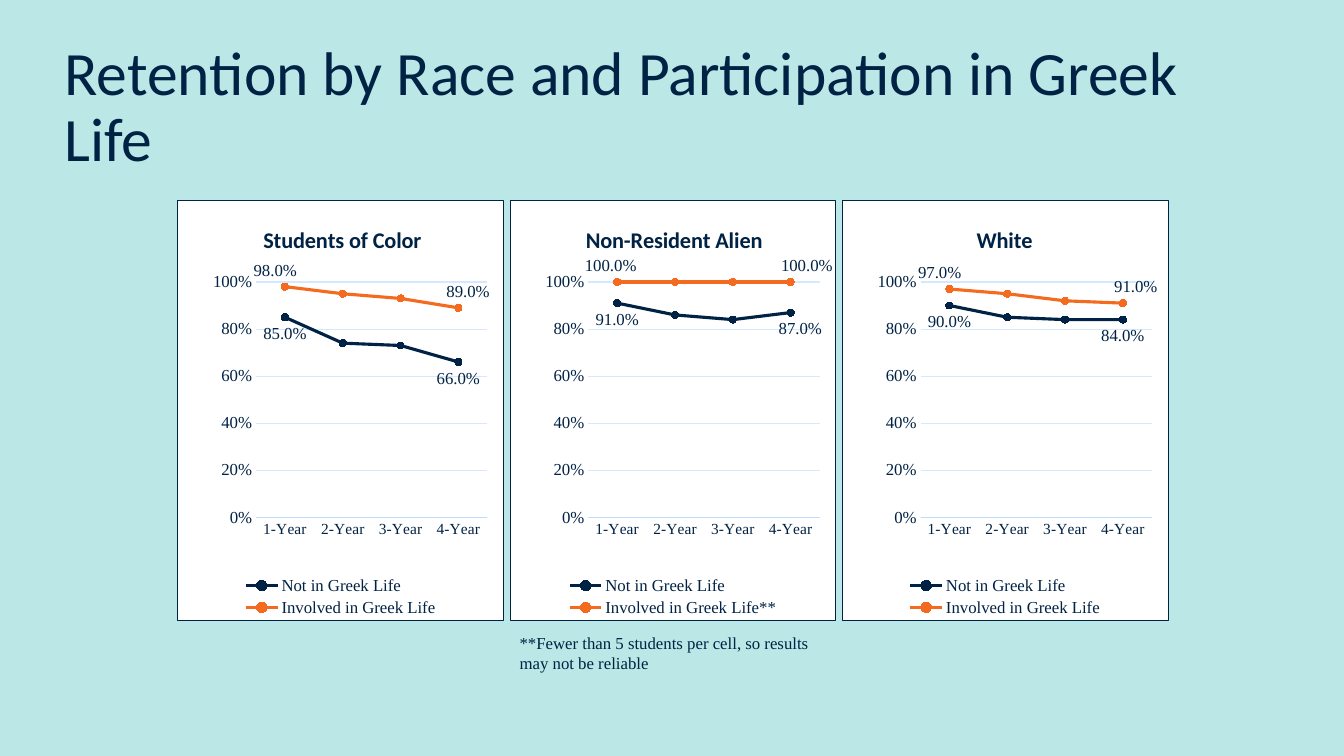
"""Build a slide of three line charts on retention and Greek Life."""
from dataclasses import dataclass

from lxml import etree
from pptx import Presentation
from pptx.chart.data import CategoryChartData
from pptx.dml.color import RGBColor
from pptx.enum.chart import (XL_CHART_TYPE, XL_LABEL_POSITION, XL_LEGEND_POSITION,
                             XL_MARKER_STYLE, XL_TICK_MARK)
from pptx.enum.text import MSO_ANCHOR, MSO_AUTO_SIZE, PP_ALIGN
from pptx.oxml import parse_xml
from pptx.oxml.ns import nsdecls, qn
from pptx.util import Inches, Pt

NAVY = RGBColor(0x00, 0x22, 0x44)
ORANGE = RGBColor(0xF4, 0x6A, 0x1F)
AQUA = RGBColor(0xBB, 0xE7, 0xE6)
AXIS_BLUE = RGBColor(0xBD, 0xDE, 0xFF)
GRID_BLUE = RGBColor(0xD3, 0xE9, 0xFF)
WHITE = RGBColor(0xFF, 0xFF, 0xFF)
SERIF = "Times New Roman"
SANS = "Calibri"
YEARS = ["1-Year", "2-Year", "3-Year", "4-Year"]
LEFT, TOP, WIDTH, HEIGHT, PITCH = 1.76, 1.98, 3.24, 4.18, 3.295


@dataclass
class Line:
    name: str
    values: list[float]
    color: RGBColor
    position: XL_LABEL_POSITION
    shifts: tuple[float, float]


@dataclass
class Panel:
    title: str
    title_x: float
    lines: list[Line]


def not_greek(values: list[float], last_shift: float = 0) -> Line:
    return Line("Not in Greek Life", values, NAVY,
                XL_LABEL_POSITION.BELOW, (0, last_shift))


def greek(values: list[float], shifts: tuple[float, float], mark: str = "") -> Line:
    return Line("Involved in Greek Life" + mark, values, ORANGE,
                XL_LABEL_POSITION.ABOVE, shifts)


PANELS = [
    Panel("Students of Color", 0.25, [
        not_greek([0.85, 0.74, 0.73, 0.66]),
        greek([0.98, 0.95, 0.93, 0.89], (-0.03, 0.03))]),
    Panel("Non-Resident Alien", 0.22, [
        not_greek([0.91, 0.86, 0.84, 0.87], 0.03),
        greek([1, 1, 1, 1], (-0.02, 0.05), "**")]),
    Panel("White", 0.4, [
        not_greek([0.9, 0.85, 0.84, 0.84]),
        greek([0.97, 0.95, 0.92, 0.91], (-0.03, 0.04))]),
]


def style_font(font, size: float, name: str = SERIF, bold: bool = False) -> None:
    font.size, font.name, font.bold = Pt(size), name, bold
    font.color.rgb = NAVY


def set_layout(parent, index: int, **fields) -> None:
    for old in parent.findall(qn("c:layout")):
        parent.remove(old)
    layout = etree.Element(qn("c:layout"))
    manual = etree.SubElement(layout, qn("c:manualLayout"))
    for tag, value in fields.items():
        etree.SubElement(manual, qn(f"c:{tag}")).set("val", str(value))
    parent.insert(index, layout)


def style_line(series, line: Line) -> None:
    series.smooth = False
    series.format.line.color.rgb = line.color
    series.format.line.width = Pt(2.25)
    marker = series.marker
    marker.style, marker.size = XL_MARKER_STYLE.CIRCLE, 5
    marker.format.fill.solid()
    marker.format.fill.fore_color.rgb = line.color
    marker.format.line.color.rgb = line.color
    labels = series.data_labels
    style_font(labels.font, 12)
    labels.number_format, labels.number_format_is_linked = "0.0%", False
    labels.show_value = False
    for idx, shift in zip((0, len(YEARS) - 1), line.shifts):
        label = series.points[idx].data_label
        style_font(label.font, 12)
        label.position = line.position
        if shift:
            dlbl = next(d for d in labels._element.findall(qn("c:dLbl"))
                        if d.find(qn("c:idx")).get("val") == str(idx))
            set_layout(dlbl, 1, x=shift, y=0)


def style_axes(chart) -> None:
    years, rates = chart.category_axis, chart.value_axis
    for axis, size in ((years, 11), (rates, 12)):
        axis.major_tick_mark = axis.minor_tick_mark = XL_TICK_MARK.NONE
        style_font(axis.tick_labels.font, size)
    years.format.line.color.rgb = AXIS_BLUE
    years.format.line.width = Pt(0.75)
    rates.format.line.fill.background()
    rates.minimum_scale, rates.maximum_scale, rates.major_unit = 0, 1, 0.2
    rates.tick_labels.number_format = "0%"
    rates.tick_labels.number_format_is_linked = False
    rates.major_gridlines.format.line.color.rgb = GRID_BLUE
    rates.major_gridlines.format.line.width = Pt(0.75)


def add_panel(s, panel: Panel, left: float) -> None:
    data = CategoryChartData(number_format="0.0%")
    data.categories = YEARS
    for line in panel.lines:
        data.add_series(line.name, line.values)
    chart = s.shapes.add_chart(XL_CHART_TYPE.LINE_MARKERS, Inches(left), Inches(TOP),
                               Inches(WIDTH), Inches(HEIGHT), data).chart
    style_font(chart.font, 10)
    space = chart.element
    space.find(qn("c:chart")).addnext(parse_xml(
        f'<c:spPr {nsdecls("c", "a")}>'
        f'<a:solidFill><a:srgbClr val="{WHITE}"/></a:solidFill>'
        f'<a:ln w="{Pt(0.75)}"><a:solidFill><a:srgbClr val="{NAVY}"/></a:solidFill></a:ln>'
        '</c:spPr>'))
    chart.has_title = True
    p = chart.chart_title.text_frame.paragraphs[0]
    p.text = panel.title
    style_font(p.font, 16, SANS, True)
    set_layout(chart.chart_title._element, 1, xMode="edge", yMode="edge",
               x=panel.title_x, y=0.05)
    set_layout(space.find(f'{qn("c:chart")}/{qn("c:plotArea")}'), 0,
               layoutTarget="inner", xMode="edge", yMode="edge",
               x=0.24, y=0.195, w=0.71, h=0.56)
    chart.has_legend = True
    chart.legend.position = XL_LEGEND_POSITION.BOTTOM
    chart.legend.include_in_layout = False
    style_font(chart.legend.font, 12)
    style_axes(chart)
    chart.plots[0].vary_by_categories = False
    for series, line in zip(chart.plots[0].series, panel.lines):
        style_line(series, line)


def add_title(s, text: str) -> None:
    sp = s.shapes.title
    sp.left, sp.top, sp.width, sp.height = map(Inches, (0.54, 0.17, 12.22, 1.81))
    tf = sp.text_frame
    tf.text = text
    tf.auto_size = MSO_AUTO_SIZE.NONE
    tf.vertical_anchor = MSO_ANCHOR.MIDDLE
    p = tf.paragraphs[0]
    p.alignment, p.line_spacing = PP_ALIGN.LEFT, 0.9
    style_font(p.font, 44, SANS)


def add_footnote(s, text: str) -> None:
    tf = s.shapes.add_textbox(Inches(LEFT + PITCH), Inches(6.23),
                              Inches(WIDTH), Inches(0.5)).text_frame
    tf.word_wrap = True
    tf.auto_size = MSO_AUTO_SIZE.SHAPE_TO_FIT_TEXT
    tf.text = text
    style_font(tf.paragraphs[0].font, 12)


def main() -> None:
    prs = Presentation()
    prs.slide_width, prs.slide_height = Inches(13.33), Inches(7.5)
    s = prs.slides.add_slide(prs.slide_layouts[5])
    s.background.fill.solid()
    s.background.fill.fore_color.rgb = AQUA
    add_title(s, "Retention by Race and Participation in Greek Life")
    for i, panel in enumerate(PANELS):
        add_panel(s, panel, LEFT + i * PITCH)
    add_footnote(s, "**Fewer than 5 students per cell, so results may not be reliable")
    prs.save("out.pptx")


if __name__ == "__main__":
    main()
